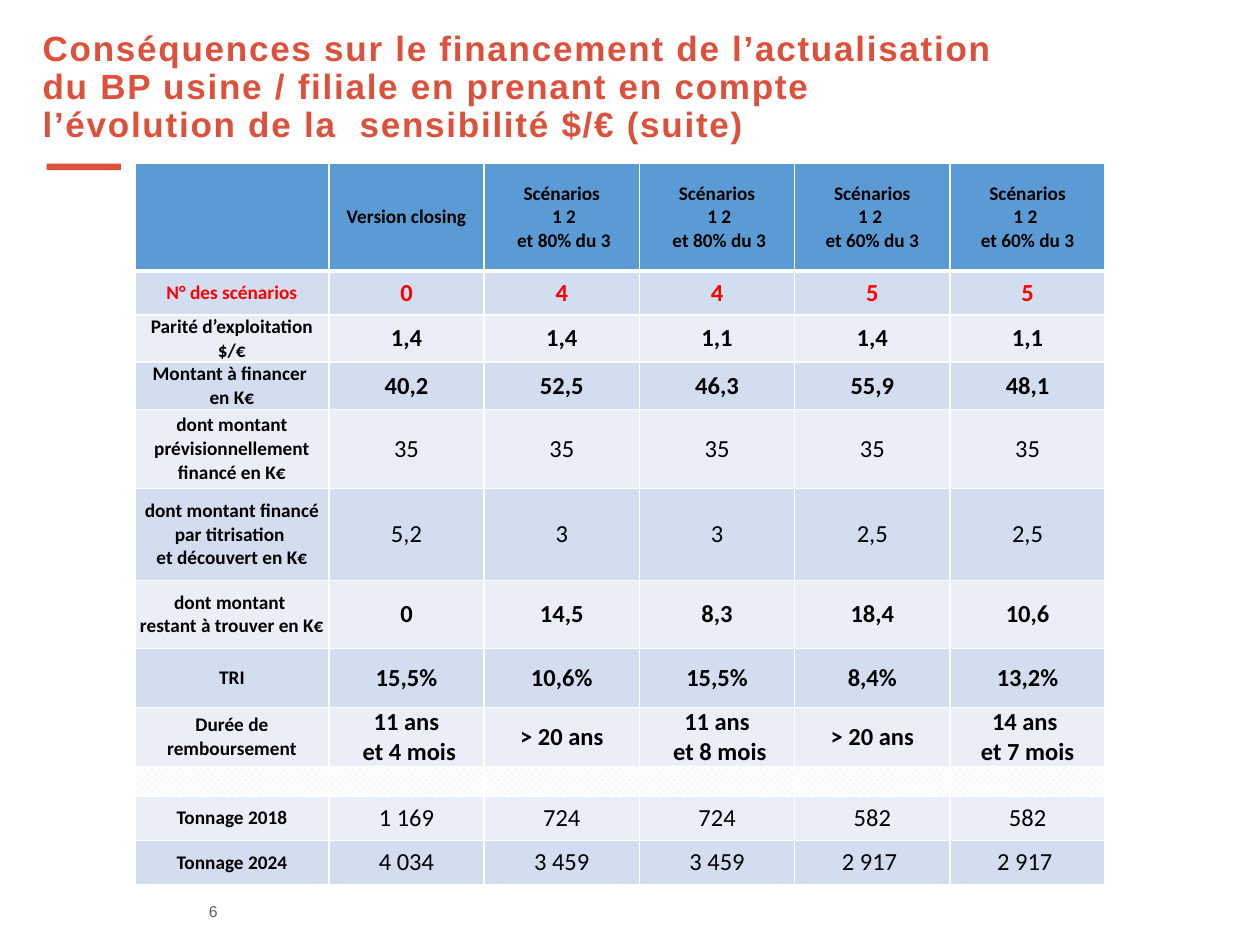
import lxml.etree
import pptx
import pptx.dml.color
import pptx.enum.dml
import pptx.enum.shapes
import pptx.enum.text
import pptx.oxml.ns
import pptx.util

Cm = pptx.util.Cm
qn = pptx.oxml.ns.qn

CORAL, GREY, BLACK, RED, WHITE = "DD503C", "5F5F5F", "000000", "FF0000", "FFFFFF"
HEADER_BLUE, BAND_DARK, BAND_LIGHT = "5B9BD5", "D2DEEF", "EAEFF7"

TITLE_LINES = [
    "Conséquences sur le financement de l’actualisation",
    "du BP usine / filiale en prenant en compte",
    "l’évolution de la  sensibilité $/€ (suite)",
]

SCENARIO_80 = "Scénarios\n 1 2\n et 80% du 3"
SCENARIO_60 = "Scénarios\n1 2 \net 60% du 3"
HEADER = ["", "Version closing", SCENARIO_80, SCENARIO_80, SCENARIO_60, SCENARIO_60]

# Height in cm, bold figures, label and figures
BODY = [
    (0.89, True, ["N° des scénarios", "0", "4", "4", "5", "5"]),
    (0.95, True, ["Parité d’exploitation $/€", "1,4", "1,4", "1,1", "1,4", "1,1"]),
    (0.95, True, ["Montant à financer \nen K€", "40,2", "52,5", "46,3", "55,9", "48,1"]),
    (1.6, False, ["dont montant prévisionnellement financé en K€"] + ["35"] * 5),
    (1.85, False, ["dont montant financé par titrisation \net découvert en K€",
                   "5,2", "3", "3", "2,5", "2,5"]),
    (1.37, True, ["dont montant \nrestant à trouver en K€", "0", "14,5", "8,3", "18,4", "10,6"]),
    (1.19, True, ["TRI", "15,5%", "10,6%", "15,5%", "8,4%", "13,2%"]),
    (1.19, True, ["Durée de remboursement", "11 ans\n et 4 mois", "> 20 ans",
                  "11 ans\n et 8 mois", "> 20 ans", "14 ans \net 7 mois"]),
    (0.6, False, [""] * 6),
    (0.89, False, ["Tonnage 2018", "1 169", "724", "724", "582", "582"]),
    (0.89, False, ["Tonnage 2024", "4 034", "3 459", "3 459", "2 917 ", "2 917 "]),
]
HEADER_HEIGHT = 2.16
COLUMN_WIDTHS = [3.91] + [3.13] * 5


def rgb(value):
    return pptx.dml.color.RGBColor.from_string(value)


def add_run(paragraph, text, font, size, color, bold=False):
    run = paragraph.add_run()
    run.text = text
    run.font.name = font
    run.font.size = pptx.util.Pt(size)
    run.font.bold = bold
    run.font.color.rgb = rgb(color)
    return run


def add_text_box(slide, left, top, width, height):
    frame = slide.shapes.add_textbox(Cm(left), Cm(top), Cm(width), Cm(height)).text_frame
    frame.word_wrap = True
    return frame


def add_title(slide):
    paragraph = add_text_box(slide, 0.61, 0.51, 22, 1.83).paragraphs[0]
    paragraph.line_spacing = 0.9
    for index, line in enumerate(TITLE_LINES):
        if index:
            paragraph.add_line_break()
        run = add_run(paragraph, line, "Arial", 20, CORAL, bold=True)
        run.font._element.set("spc", "100")
    for line_break in paragraph._p.findall(qn("a:br")):
        lxml.etree.SubElement(line_break, qn("a:rPr"), sz="2000")


def add_title_rule(slide):
    rule = slide.shapes.add_shape(pptx.enum.shapes.MSO_SHAPE.RECTANGLE,
                                  Cm(0.94), Cm(3.3), Cm(1.5), Cm(0.13))
    rule.shadow.inherit = False
    rule.fill.solid()
    rule.fill.fore_color.rgb = rgb(CORAL)
    rule.line.fill.background()


def add_page_number(slide):
    frame = add_text_box(slide, 3.96, 18.14, 0.94, 0.46)
    frame.vertical_anchor = pptx.enum.text.MSO_ANCHOR.MIDDLE
    add_run(frame.paragraphs[0], "6", "Arial", 9, GREY)


def set_borders(cell, top=1, bottom=1):
    properties = cell._tc.get_or_add_tcPr()
    for side, points in (("L", 1), ("R", 1), ("T", top), ("B", bottom)):
        line = lxml.etree.SubElement(properties, qn(f"a:ln{side}"), w=str(pptx.util.Pt(points)))
        fill = lxml.etree.SubElement(line, qn("a:solidFill"))
        lxml.etree.SubElement(fill, qn("a:srgbClr"), val=WHITE)


def fill_cell(cell, color, checkered=False):
    if checkered:
        cell.fill.patterned()
        cell.fill.pattern = pptx.enum.dml.MSO_PATTERN.LARGE_CHECKER_BOARD
        cell.fill.back_color.rgb = rgb(WHITE)
    else:
        cell.fill.solid()
    cell.fill.fore_color.rgb = rgb(color)


def write_cell(cell, text, size, color, bold):
    cell.margin_left = cell.margin_right = cell.margin_top = cell.margin_bottom = 0
    cell.vertical_anchor = pptx.enum.text.MSO_ANCHOR.MIDDLE
    frame = cell.text_frame
    for index, line in enumerate(text.split("\n")):
        paragraph = frame.add_paragraph() if index else frame.paragraphs[0]
        paragraph.alignment = pptx.enum.text.PP_ALIGN.CENTER
        if line:
            add_run(paragraph, line, "Calibri", size, color, bold)
        else:
            lxml.etree.SubElement(paragraph._p, qn("a:endParaRPr"), sz=str(size * 100))


def add_scenario_table(slide):
    heights = [HEADER_HEIGHT] + [height for height, _, _ in BODY]
    table = slide.shapes.add_table(len(heights), len(COLUMN_WIDTHS), Cm(2.72), Cm(3.3),
                                   Cm(sum(COLUMN_WIDTHS)), Cm(sum(heights))).table
    table.horz_banding = False
    for column, width in zip(table.columns, COLUMN_WIDTHS):
        column.width = Cm(width)
    for row, height in zip(table.rows, heights):
        row.height = Cm(height)

    for cell, text in zip(table.rows[0].cells, HEADER):
        set_borders(cell, bottom=3)
        fill_cell(cell, HEADER_BLUE)
        write_cell(cell, text, 11, BLACK, True)

    for number, (_, bold_figures, texts) in enumerate(BODY):
        is_spacer = not any(texts)
        band = BAND_LIGHT if number % 2 or is_spacer else BAND_DARK
        color = BLACK if number else RED
        for column, text in enumerate(texts):
            cell = table.cell(number + 1, column)
            is_label = column == 0 and not is_spacer
            set_borders(cell, top=1 if number else 3)
            fill_cell(cell, band, checkered=is_spacer)
            write_cell(cell, text, 11 if is_label else 14, color, is_label or bold_figures)


def main():
    presentation = pptx.Presentation()
    presentation.slide_width = Cm(25.4)
    presentation.slide_height = Cm(19.05)
    slide = presentation.slides.add_slide(presentation.slide_layouts[6])
    add_page_number(slide)
    add_title(slide)
    add_title_rule(slide)
    add_scenario_table(slide)
    presentation.save("out.pptx")


if __name__ == "__main__":
    main()
